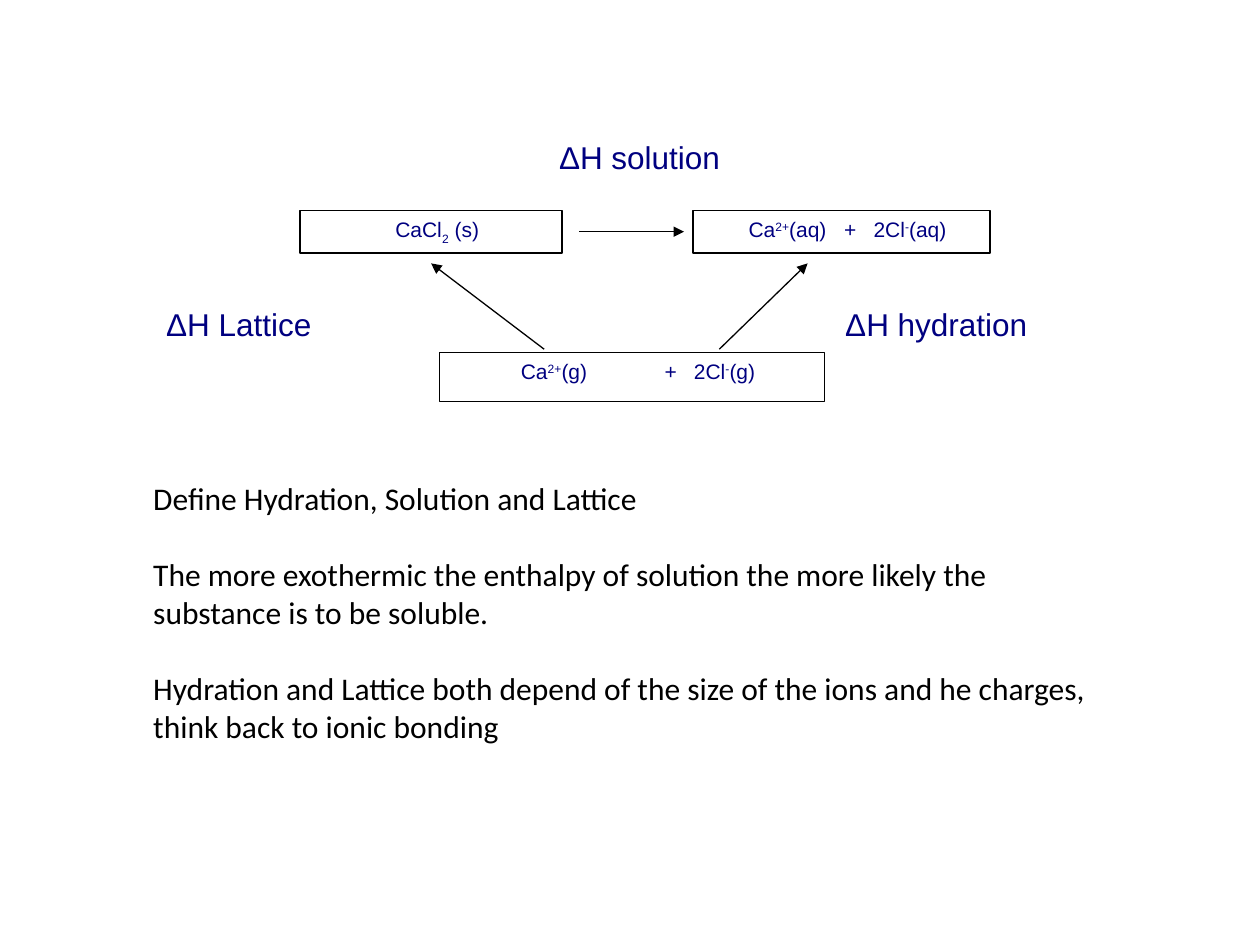
"""Build the enthalpy of solution cycle slide."""
from lxml.etree import SubElement
from pptx import Presentation
from pptx.dml.color import RGBColor
from pptx.enum.shapes import MSO_CONNECTOR, MSO_SHAPE
from pptx.enum.text import MSO_ANCHOR, PP_ALIGN
from pptx.oxml.ns import qn
from pptx.util import Cm, Pt

NAVY = RGBColor(0x00, 0x00, 0x80)
BLACK = RGBColor(0x00, 0x00, 0x00)
WHITE = RGBColor(0xFF, 0xFF, 0xFF)
SUPER, SUB = 30000, -30000


def add_text(para, text, size=18, font="Arial", color=NAVY, baseline=None):
    span = para.add_run()
    span.text = text
    span.font.size = Pt(size)
    span.font.name = font
    span.font.color.rgb = color
    if baseline:
        span.font._element.set("baseline", str(baseline))


class CycleSlide:
    def __init__(self, deck):
        self.slide = deck.slides.add_slide(deck.slide_layouts[6])
        self.cycle = self.slide.shapes.add_group_shape()
        self.line_width = Pt(0.75)

    def species(self, left, top, width, height, spans, inset=0.25, tabs=()):
        box = self.cycle.shapes.add_shape(
            MSO_SHAPE.RECTANGLE, Cm(left), Cm(top), Cm(width), Cm(height))
        box.shadow.inherit = False
        box.fill.solid()
        box.fill.fore_color.rgb = WHITE
        box.line.color.rgb = BLACK
        box.line.width = self.line_width
        frame = box.text_frame
        frame.vertical_anchor = MSO_ANCHOR.TOP
        frame.margin_left, frame.margin_right = Cm(inset), 0
        para = frame.paragraphs[0]
        para.alignment = PP_ALIGN.LEFT if tabs else PP_ALIGN.CENTER
        if tabs:
            tab_list = SubElement(para._p.get_or_add_pPr(), qn("a:tabLst"))
            for stop in tabs:
                SubElement(tab_list, qn("a:tab"), pos=str(Cm(stop)), algn="l")
        for text, baseline in spans:
            add_text(para, text, size=12, baseline=baseline)

    def arrow(self, *ends):
        line = self.cycle.shapes.add_connector(
            MSO_CONNECTOR.STRAIGHT, *(Cm(end) for end in ends))
        line.line.color.rgb = BLACK
        line.line.width = self.line_width
        SubElement(line.line._get_or_add_ln(), qn("a:tailEnd"), type="triangle")
        SubElement(line._element.spPr, qn("a:effectLst"))

    def text_box(self, left, top, width, height, paragraphs,
                 anchor=MSO_ANCHOR.TOP, gap=0, **style):
        box = self.slide.shapes.add_textbox(
            Cm(left), Cm(top), Cm(width), Cm(height))
        frame = box.text_frame
        frame.word_wrap = True
        frame.vertical_anchor = anchor
        for index, text in enumerate(paragraphs):
            para = frame.add_paragraph() if index else frame.paragraphs[0]
            if index:
                para.space_before = Pt(gap)
            add_text(para, text, **style)

    def label(self, left, top, width, text):
        self.text_box(left, top, width, 1.55, [text], anchor=MSO_ANCHOR.BOTTOM)


def ions(state):
    return [("Ca", None), ("2+", SUPER), (f"({state})\t+\t2Cl", None),
            ("-", SUPER), (f"({state})", None)]


def main():
    deck = Presentation()
    deck.slide_width, deck.slide_height = Cm(25.4), Cm(19.05)
    page = CycleSlide(deck)

    page.species(6.05, 4.24, 5.28, 0.86,
                 [("CaCl", None), ("2", SUB), (" (s)", None)])
    page.species(13.97, 4.24, 5.99, 0.86, ions("aq"), 1.12, (1.93, 2.52))
    page.species(8.86, 7.11, 7.77, 0.99, ions("g"), 1.64, (2.9, 3.49))

    page.arrow(11.68, 4.67, 13.79, 4.67)
    page.arrow(10.97, 7.04, 8.69, 5.31)
    page.arrow(14.5, 7.04, 16.28, 5.31)

    page.label(11.02, 2.11, 3.86, "ΔH solution")
    page.label(16.79, 5.49, 4.93, "ΔH hydration")
    page.label(3.1, 5.49, 4.93, "ΔH Lattice")

    page.text_box(2.84, 9.53, 19.81, 5.64, [
        "Define Hydration, Solution and Lattice",
        "The more exothermic the enthalpy of solution the more likely the "
        "substance is to be soluble.",
        "Hydration and Lattice both depend of the size of the ions and he "
        "charges, think back to ionic bonding",
    ], gap=22, font="Calibri", color=BLACK)

    deck.save("out.pptx")


if __name__ == "__main__":
    main()
